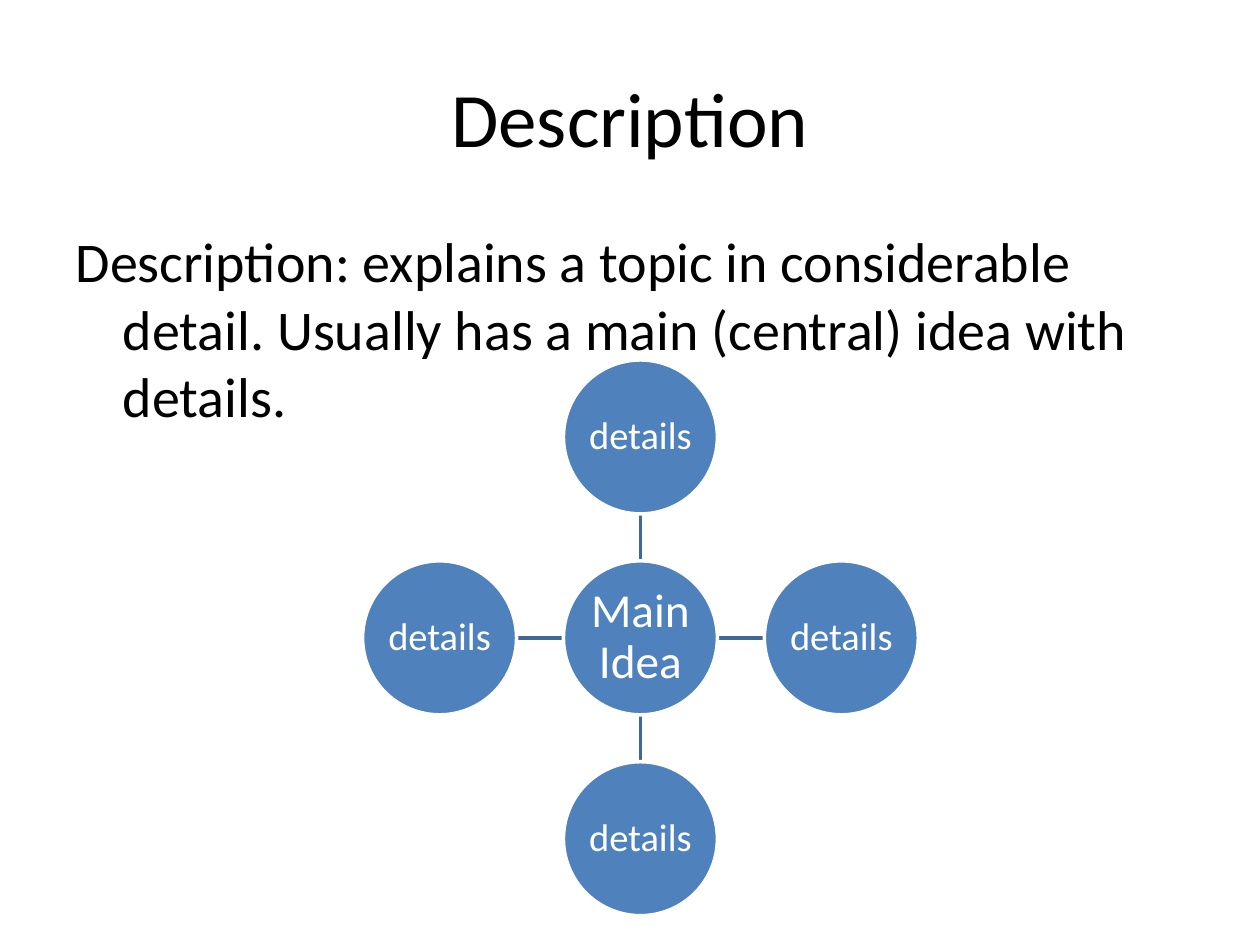
from lxml import etree
from pptx import Presentation
from pptx.dml.color import RGBColor
from pptx.enum.shapes import MSO_CONNECTOR, MSO_SHAPE
from pptx.enum.text import MSO_ANCHOR, PP_ALIGN
from pptx.oxml.ns import qn
from pptx.util import Pt

LINE = MSO_CONNECTOR.STRAIGHT
OVAL = MSO_SHAPE.OVAL
MID, TOP = MSO_ANCHOR.MIDDLE, MSO_ANCHOR.TOP
MID_X, LEFT = PP_ALIGN.CENTER, PP_ALIGN.LEFT

TITLE = "Description"
BODY = ("Description: explains a topic in considerable detail. "
        "Usually has a main (central) idea with details.")
HUB = "Main Idea"
SPOKES = [("details", 0, -1), ("details", 1, 0),
          ("details", 0, 1), ("details", -1, 0)]

COLORS = {"ink": "000000", "disc": "4F81BD", "edge": "FFFFFF", "spoke": "3F6797"}
FONT = "Calibri"
HUB_X, HUB_Y = 366, 364.5
SIZE, STEP = 88, 114.8
INSET = 1.44


def color(name):
    return RGBColor.from_string(COLORS[name])


def apply(item, values):
    for key, value in values.items():
        setattr(item, key, value)


def write(shape, text, size, ink, align, anchor):
    frame = shape.text_frame
    apply(frame, {"text": text, "word_wrap": True, "vertical_anchor": anchor})
    para = frame.paragraphs[0]
    para.alignment = align
    font = para.runs[0].font
    apply(font, {"name": FONT, "size": Pt(size)})
    font.color.rgb = color(ink)
    return para


def place(shape, left, top, width, height):
    apply(shape, {"left": Pt(left), "top": Pt(top),
                  "width": Pt(width), "height": Pt(height)})


def disc(slide, text, x, y, size):
    shape = slide.shapes.add_shape(
        OVAL, Pt(x - SIZE / 2), Pt(y - SIZE / 2), Pt(SIZE), Pt(SIZE))
    shape.shadow.inherit = False
    shape.fill.solid()
    shape.fill.fore_color.rgb = color("disc")
    shape.line.color.rgb = color("edge")
    shape.line.width = Pt(2)
    sides = ("left", "top", "right", "bottom")
    apply(shape.text_frame, {f"margin_{side}": Pt(INSET) for side in sides})
    para = write(shape, text, size, "edge", MID_X, MID)
    para.line_spacing = 0.9


def spoke(slide, dx, dy):
    near, far = SIZE / 2, STEP - SIZE / 2
    line = slide.shapes.add_connector(
        LINE, Pt(HUB_X + dx * near), Pt(HUB_Y + dy * near),
        Pt(HUB_X + dx * far), Pt(HUB_Y + dy * far))
    line.line.color.rgb = color("spoke")
    line.line.width = Pt(2)
    etree.SubElement(line._element.spPr, qn("a:effectLst"))


def main():
    deck = Presentation()
    apply(deck, {"slide_width": Pt(720), "slide_height": Pt(540)})
    slide = deck.slides.add_slide(deck.slide_layouts[1])
    title, body = slide.placeholders
    place(title, 36, 21.6, 648, 90)
    write(title, TITLE, 44, "ink", MID_X, MID)
    place(body, 36, 126, 648, 356.4)
    para = write(body, BODY, 32, "ink", LEFT, TOP)
    props = para._p.get_or_add_pPr()
    apply_indent = {"marL": Pt(27), "indent": Pt(-27)}
    for key, value in apply_indent.items():
        props.set(key, str(value))
    etree.SubElement(props, qn("a:buNone"))

    for text, dx, dy in SPOKES:
        spoke(slide, dx, dy)
    disc(slide, HUB, HUB_X, HUB_Y, 27)
    for text, dx, dy in SPOKES:
        disc(slide, text, HUB_X + dx * STEP, HUB_Y + dy * STEP, 22)
    deck.save("out.pptx")


if __name__ == "__main__":
    main()
